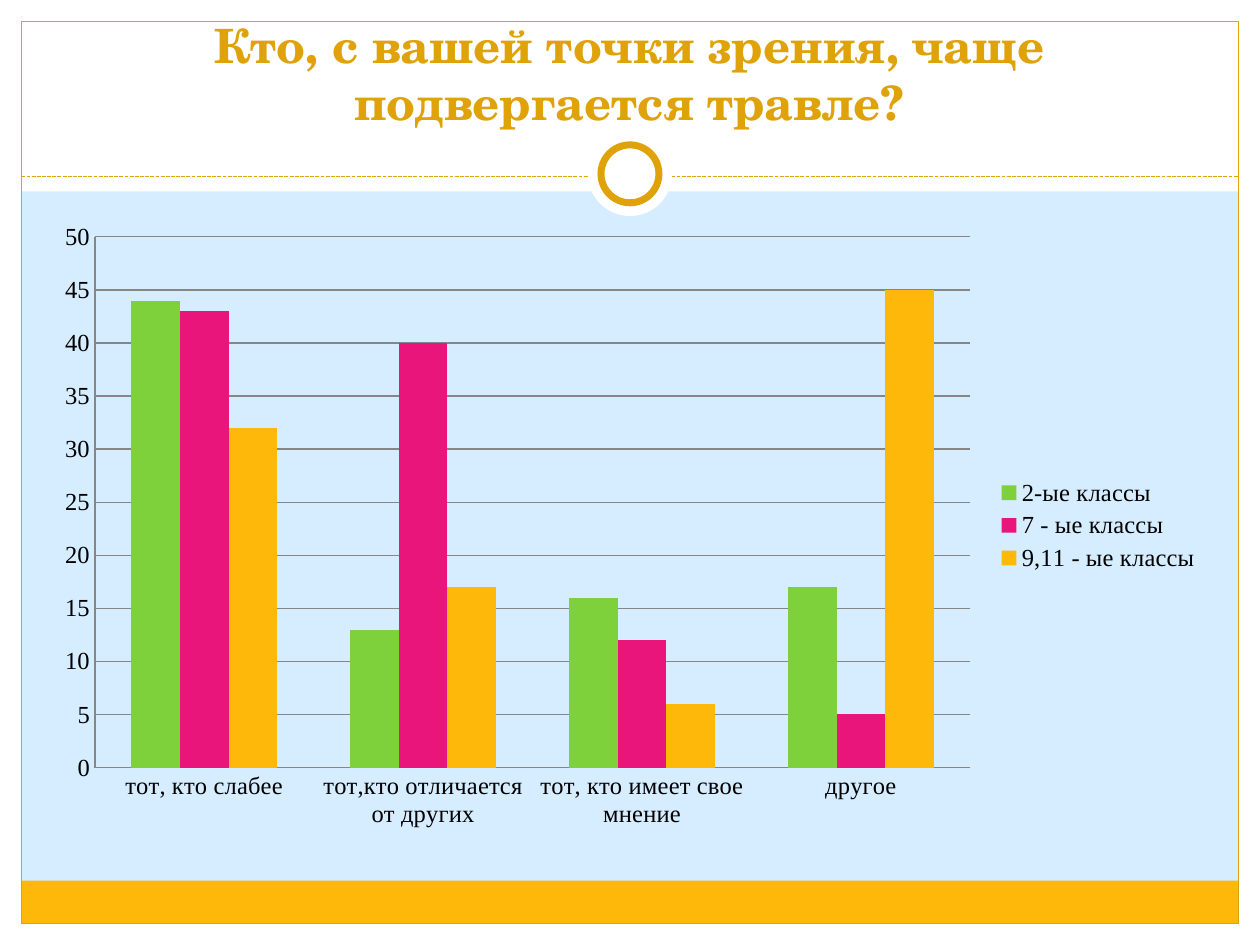
from dataclasses import dataclass

from pptx import Presentation
from pptx.chart.data import CategoryChartData
from pptx.dml.color import RGBColor
from pptx.enum.chart import XL_CHART_TYPE, XL_LEGEND_POSITION, XL_TICK_MARK
from pptx.enum.dml import MSO_LINE
from pptx.enum.shapes import MSO_CONNECTOR, MSO_SHAPE
from pptx.enum.text import MSO_ANCHOR, MSO_AUTO_SIZE, PP_ALIGN
from pptx.oxml.ns import qn
from pptx.util import Inches, Pt
from lxml.etree import SubElement


@dataclass(frozen=True)
class Theme:
    sky: str = "D6ECFF"
    white: str = "FFFFFF"
    black: str = "000000"
    gray: str = "868686"
    gold: str = "E0A209"
    amber: str = "FEB80A"
    green: str = "7FD13B"
    pink: str = "EA157A"
    head: str = "TeX Gyre Schola"
    body: str = "Times New Roman"
    big: float = 27
    small: float = 14
    thin: float = 0.75
    thick: float = 4


def color(code):
    return RGBColor.from_string(code)


class Deck:
    def __init__(self, style, slide):
        self.style = style
        self.slide = slide
        fill = slide.background.fill
        fill.solid()
        fill.fore_color.rgb = color(style.sky)

    def stroke(self, line, code, width):
        line.color.rgb = color(code)
        line.width = Pt(width)

    def shape(self, kind, box, fill=None, edge=None, width=0.75):
        item = self.slide.shapes.add_shape(kind, *map(Inches, box))
        item.shadow.inherit = False
        if fill:
            item.fill.solid()
            item.fill.fore_color.rgb = color(fill)
        else:
            item.fill.background()
        if edge:
            self.stroke(item.line, edge, width)
        else:
            item.line.fill.background()

    def ring(self, mid, size, **look):
        x, y = mid
        box = (x - size / 2, y - size / 2, size, size)
        self.shape(MSO_SHAPE.OVAL, box, self.style.white, **look)

    def dash(self, start, end):
        rule = self.slide.shapes.add_connector(
            MSO_CONNECTOR.STRAIGHT, *map(Inches, start + end))
        self.stroke(rule.line, self.style.gold, self.style.thin)
        rule.line.dash_style = MSO_LINE.SQUARE_DOT
        SubElement(rule._element.spPr, qn("a:effectLst"))

    def title(self, text, box):
        item = self.slide.shapes.title
        item.left, item.top, item.width, item.height = map(Inches, box)
        self.slide.shapes._spTree.append(item._element)
        frame = item.text_frame
        frame.word_wrap = True
        frame.auto_size = MSO_AUTO_SIZE.NONE
        frame.vertical_anchor = MSO_ANCHOR.BOTTOM
        para = frame.paragraphs[0]
        para.alignment = PP_ALIGN.CENTER
        run = para.add_run()
        run.text = text
        run.font.name = self.style.head
        run.font.size = Pt(self.style.big)
        run.font.bold = True
        run.font.color.rgb = color(self.style.gold)

    def chart(self, box, groups, series):
        data = CategoryChartData()
        data.categories = groups
        for name, values, _ in series:
            data.add_series(name, values)
        chart = self.slide.shapes.add_chart(
            XL_CHART_TYPE.COLUMN_CLUSTERED, *map(Inches, box), data).chart
        chart.has_title = False
        chart.font.name = self.style.body
        chart.font.size = Pt(self.style.small)
        chart.font.color.rgb = color(self.style.black)
        chart.has_legend = True
        chart.legend.position = XL_LEGEND_POSITION.RIGHT
        chart.legend.include_in_layout = False
        plot = chart.plots[0]
        plot.gap_width = 150
        plot.overlap = 0
        plot.vary_by_categories = False
        for bar, (_, _, code) in zip(plot.series, series):
            bar.invert_if_negative = False
            bar.format.fill.solid()
            bar.format.fill.fore_color.rgb = color(code)
        scale = chart.value_axis
        for axis in (chart.category_axis, scale):
            axis.major_tick_mark = XL_TICK_MARK.NONE
            axis.minor_tick_mark = XL_TICK_MARK.NONE
            self.stroke(axis.format.line, self.style.gray, self.style.thin)
        scale.minimum_scale, scale.maximum_scale = 0, 50
        scale.major_unit = 5
        scale.has_major_gridlines = True
        self.stroke(scale.major_gridlines.format.line,
                    self.style.gray, self.style.thin)


def main():
    show = Presentation()
    wide, high = 10, 7.5
    show.slide_width, show.slide_height = Inches(wide), Inches(high)
    style = Theme()
    deck = Deck(style, show.slides.add_slide(show.slide_layouts[5]))

    edge = 0.17
    span, tall = wide - 2 * edge, high - 2 * edge
    rect = MSO_SHAPE.RECTANGLE
    for box in ((0, high - edge, wide, edge), (0, 0, wide, 1.52),
                (0, 0, edge, high), (wide - edge, 0, edge, high)):
        deck.shape(rect, box, style.white)
    deck.shape(rect, (edge, 6.99, span, 0.34), style.amber)
    deck.shape(rect, (edge, edge, span, tall), edge=style.gold,
               width=style.thin)
    deck.dash((edge, 1.4), (wide - edge, 1.4))
    mid = (wide / 2, 1.38)
    deck.ring(mid, 0.67)
    deck.ring(mid, 0.46, edge=style.gold, width=style.thick)

    deck.title("Кто, с вашей точки зрения, чаще подвергается травле?",
               (0.33, 0.25, 9.33, 0.83))
    deck.chart(
        (0.33, 1.67, 9.3, 5),
        ("тот, кто слабее", "тот,кто отличается от других",
         "тот, кто имеет свое мнение", "другое"),
        (("2-ые классы", (44, 13, 16, 17), style.green),
         ("7 - ые классы", (43, 40, 12, 5), style.pink),
         ("9,11 - ые классы", (32, 17, 6, 45), style.amber)))
    show.save("out.pptx")


if __name__ == "__main__":
    main()
